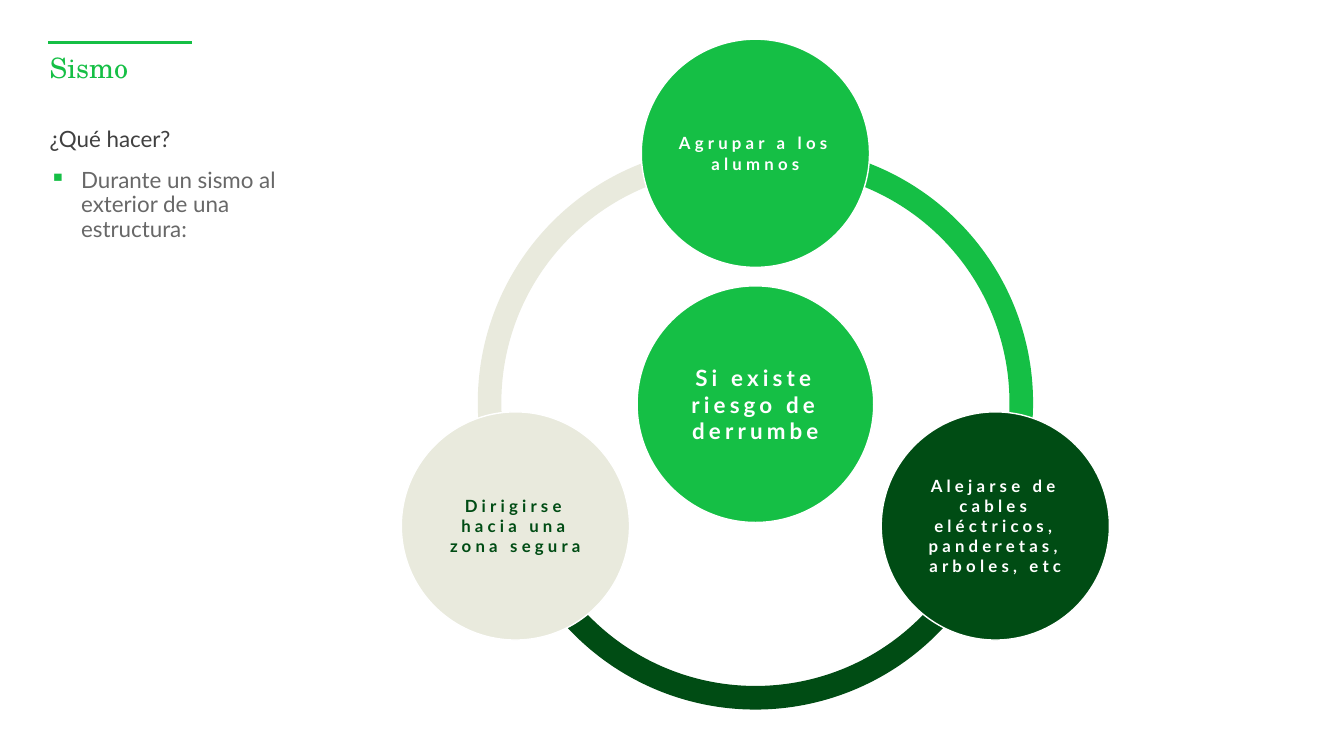
from lxml.etree import SubElement
from pptx import Presentation
from pptx.dml.color import RGBColor
from pptx.enum.shapes import MSO_CONNECTOR, MSO_SHAPE
from pptx.enum.text import MSO_ANCHOR, PP_ALIGN
from pptx.oxml.ns import qn
from pptx.util import Pt

GREEN = RGBColor(0x15, 0xBF, 0x45)
DARK = RGBColor(0x00, 0x4C, 0x14)
CREAM = RGBColor(0xE9, 0xEA, 0xDD)
WHITE = RGBColor(0xFF, 0xFF, 0xFF)
CHARCOAL = RGBColor(0x40, 0x40, 0x40)
GREY = RGBColor(0x68, 0x68, 0x68)


class SlideBuilder:
    """Holds the fonts and the current slide, and draws each kind of element."""

    body_font = "Lato"
    title_font = "TeX Gyre Schola"

    def __init__(self, slide):
        self.shapes = slide.shapes

    def fill_text(self, tf, text, color, font, paragraph, margin=0):
        for side in ("left", "top", "right", "bottom"):
            setattr(tf, f"margin_{side}", Pt(margin))
        tf.word_wrap = True
        p = tf.paragraphs[0]
        for name, value in paragraph.items():
            setattr(p, name, value)
        r = p.add_run()
        r.text = text
        for name, value in font.items():
            setattr(r.font, name, value)
        r.font.color.rgb = color
        return p, r

    def rule(self, x1, x2, y, color, width):
        sp = self.shapes.add_connector(MSO_CONNECTOR.STRAIGHT, Pt(x1), Pt(y), Pt(x2), Pt(y))
        sp.line.color.rgb = color
        sp.line.width = Pt(width)
        SubElement(sp._element.spPr, qn("a:effectLst"))

    def text(self, x, y, w, h, text, size, color, font=body_font):
        tf = self.shapes.add_textbox(Pt(x), Pt(y), Pt(w), Pt(h)).text_frame
        style = {"name": font, "size": Pt(size)}
        return self.fill_text(tf, text, color, style, {"line_spacing": 0.9})[0]

    def bullet(self, x, y, w, h, text, size, color, indent):
        p = self.text(x, y, w, h, text, size, color)
        p.space_after = Pt(3)
        pPr = p._p.get_or_add_pPr()
        pPr.set("marL", str(Pt(indent)))
        pPr.set("indent", str(-Pt(indent)))
        SubElement(SubElement(pPr, qn("a:buClr")), qn("a:srgbClr"), val=str(GREEN))
        SubElement(pPr, qn("a:buChar"), char="▪")

    def round_shape(self, kind, cx, cy, d, fill):
        sp = self.shapes.add_shape(kind, Pt(cx - d / 2), Pt(cy - d / 2), Pt(d), Pt(d))
        sp.shadow.inherit = False
        sp.fill.solid()
        sp.fill.fore_color.rgb = fill
        return sp

    def arc(self, cx, cy, d, start, end, fill):
        sp = self.round_shape(MSO_SHAPE.BLOCK_ARC, cx, cy, d, fill)
        sp.line.fill.background()
        for i, value in enumerate((start * 0.6, end * 0.6, 0.046)):
            sp.adjustments[i] = value

    def circle(self, cx, cy, d, fill, text, size, color, margin):
        sp = self.round_shape(MSO_SHAPE.OVAL, cx, cy, d, fill)
        sp.line.color.rgb = WHITE
        sp.line.width = Pt(1)
        tf = sp.text_frame
        tf.vertical_anchor = MSO_ANCHOR.MIDDLE
        style = {"name": self.body_font, "size": Pt(size), "bold": True}
        r = self.fill_text(tf, text, color, style, {"alignment": PP_ALIGN.CENTER}, margin)[1]
        r._r.get_or_add_rPr().set("spc", "300")


def main():
    prs = Presentation()
    prs.slide_width, prs.slide_height = Pt(960), Pt(540)
    s = SlideBuilder(prs.slides.add_slide(prs.slide_layouts[6]))

    s.rule(34.5, 137, 30.3, GREEN, 1.75)
    s.text(35.5, 39, 777, 41, "Sismo", 20, GREEN, s.title_font)
    s.text(35.5, 91.5, 777, 28, "¿Qué hacer?", 16, CHARCOAL)
    s.bullet(35.5, 121, 205, 325, "Durante un sismo al exterior de una estructura:", 16, GREY, 22.5)

    for cx, cy, start, end, fill in (
        (524.5, 287.6, 150.75, 274.86, CREAM),
        (539.6, 323.6, 16.81, 163.19, DARK),
        (554.7, 287.6, 265.14, 29.25, GREEN),
    ):
        s.arc(cx, cy, 366.5, start, end, fill)

    s.circle(539.6, 288.7, 169, GREEN, "Si existe riesgo de derrumbe", 16, WHITE, 2)
    for cx, cy, fill, text, color, margin in (
        (539.6, 109.5, GREEN, "Agrupar a los alumnos", WHITE, 0),
        (711, 375.7, DARK, "Alejarse de cables eléctricos, panderetas, arboles, etc", WHITE, 1.5),
        (368.2, 375.7, CREAM, "Dirigirse hacia una zona segura", DARK, 0),
    ):
        s.circle(cx, cy, 163, fill, text, 12, color, margin)

    prs.save("out.pptx")


if __name__ == "__main__":
    main()
